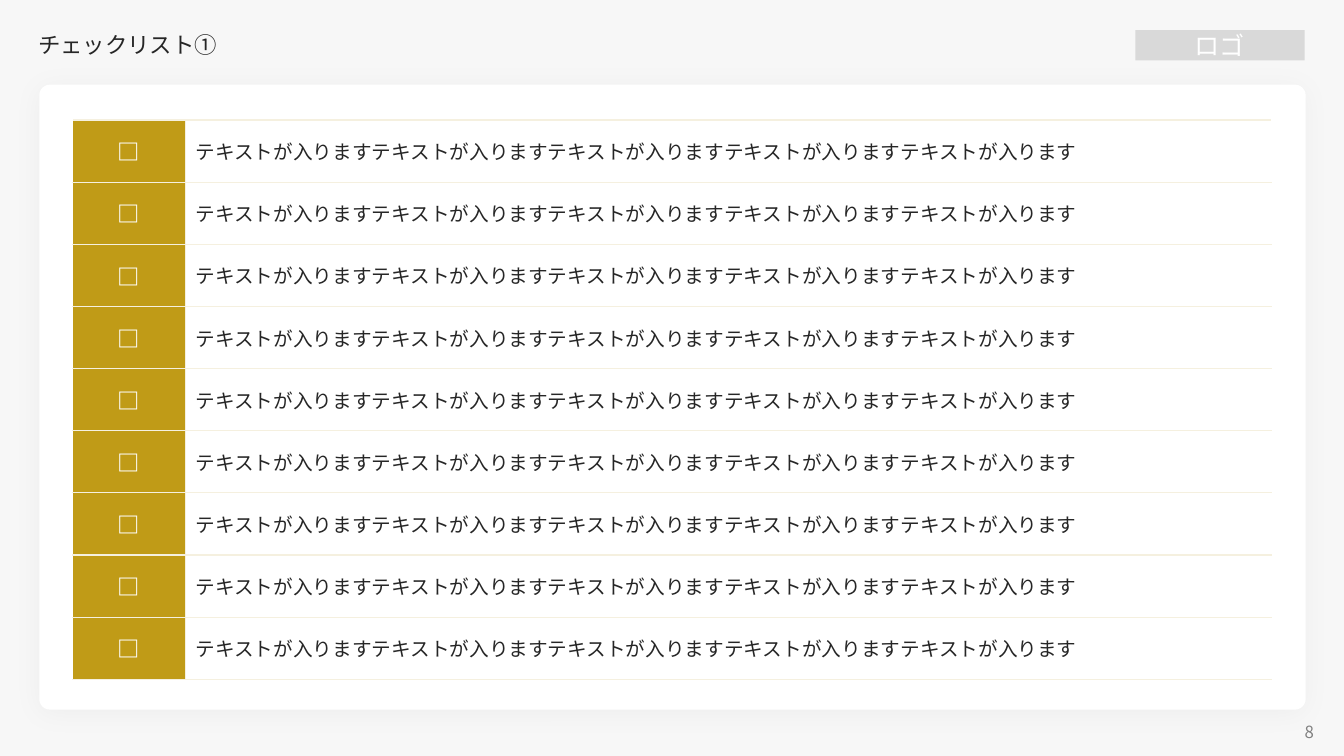
"""Build a checklist slide with a nine-row table on a white card."""
from dataclasses import dataclass

from lxml.etree import SubElement
from pptx import Presentation
from pptx.dml.color import RGBColor
from pptx.enum.shapes import MSO_SHAPE
from pptx.enum.text import MSO_ANCHOR, PP_ALIGN
from pptx.oxml.ns import qn
from pptx.util import Inches, Pt

FONT = "Noto Sans CJK JP"
COLORS = {
    "page": "F7F7F7",
    "white": "FFFFFF",
    "logo": "D9D9D9",
    "gold": "C09B17",
    "rule": "F5F0DF",
    "text": "262626",
    "number": "808080",
}
ROWS = 9
ROW_HEIGHT = 5.55 / ROWS
ITEM = "テキストが入ります" * 5


@dataclass
class Box:
    left: float
    top: float
    width: float
    height: float

    def place(self) -> tuple:
        return tuple(Inches(n) for n in (self.left, self.top, self.width, self.height))


@dataclass
class Style:
    size: int
    color: str
    align: PP_ALIGN = PP_ALIGN.LEFT
    bold: bool = False
    spacing: float = 1.0


@dataclass
class Column:
    width: float
    text: str
    fill: str
    style: Style
    edges: dict


@dataclass
class Panel:
    box: Box
    kind: MSO_SHAPE
    fill: str


@dataclass
class Label:
    box: Box
    text: str
    style: Style


PAGE = Panel(Box(0, 0, 13.33, 7.5), MSO_SHAPE.RECTANGLE, "page")
CARD = Panel(Box(0.39, 0.84, 12.56, 6.2), MSO_SHAPE.ROUNDED_RECTANGLE, "white")
LOGO = Panel(Box(11.26, 0.3, 1.68, 0.3), MSO_SHAPE.RECTANGLE, "logo")
LABELS = [
    Label(Box(10.02, 7.14, 3.11, 0.24), "8", Style(12, "number", PP_ALIGN.RIGHT)),
    Label(Box(0.28, 0.25, 10, 0.41), "チェックリスト①", Style(16, "text", spacing=0.9)),
]
COLUMNS = [
    Column(1.12, "□", "gold", Style(16, "white", PP_ALIGN.CENTER, True),
           {"L": "white", "R": "rule", "T": "rule", "B": "rule"}),
    Column(10.77, ITEM, "white", Style(14, "text"),
           {"L": "rule", "T": "rule", "B": "rule"}),
]


def tint(name: str) -> RGBColor:
    return RGBColor.from_string(COLORS[name])


def write(frame, text: str, style: Style) -> None:
    frame.text = text
    frame.word_wrap = True
    para = frame.paragraphs[0]
    para.alignment = style.align
    para.line_spacing = style.spacing
    font = para.runs[0].font
    font.size = Pt(style.size)
    font.bold = style.bold
    font.color.rgb = tint(style.color)
    font.name = FONT
    SubElement(font._element, qn("a:ea"), typeface=FONT)


def add_panel(slide, panel: Panel):
    shape = slide.shapes.add_shape(panel.kind, *panel.box.place())
    shape.shadow.inherit = False
    shape.fill.solid()
    shape.fill.fore_color.rgb = tint(panel.fill)
    shape.line.fill.background()
    return shape


def add_shadow(shape) -> None:
    effects = shape._element.spPr.find(qn("a:effectLst"))
    shadow = SubElement(effects, qn("a:outerShdw"), blurRad=str(Pt(20)),
                        dist=str(Pt(3)), dir="5400000", algn="t", rotWithShape="0")
    color = SubElement(shadow, qn("a:srgbClr"), val="000000")
    SubElement(color, qn("a:alpha"), val="3000")


def add_label(slide, label: Label) -> None:
    frame = slide.shapes.add_textbox(*label.box.place()).text_frame
    frame.vertical_anchor = MSO_ANCHOR.MIDDLE
    write(frame, label.text, label.style)


def add_edge(cell, side: str, color: str) -> None:
    props = cell._tc.get_or_add_tcPr()
    line = SubElement(props, qn(f"a:ln{side}"), w=str(Pt(1)))
    fill = SubElement(line, qn("a:solidFill"))
    SubElement(fill, qn("a:srgbClr"), val=COLORS[color])


def fill_cell(cell, column: Column) -> None:
    for side, color in column.edges.items():
        add_edge(cell, side, color)
    cell.fill.solid()
    cell.fill.fore_color.rgb = tint(column.fill)
    cell.vertical_anchor = MSO_ANCHOR.MIDDLE
    write(cell.text_frame, column.text, column.style)


def add_list(slide) -> None:
    box = Box(0.72, 1.19, sum(c.width for c in COLUMNS), ROWS * ROW_HEIGHT)
    table = slide.shapes.add_table(ROWS, len(COLUMNS), *box.place()).table
    table.first_row = False
    table.horz_banding = False
    for row in table.rows:
        row.height = Inches(ROW_HEIGHT)
    for index, column in enumerate(COLUMNS):
        table.columns[index].width = Inches(column.width)
        for row in range(ROWS):
            fill_cell(table.cell(row, index), column)


def main() -> None:
    deck = Presentation()
    deck.slide_width = Inches(13.33)
    deck.slide_height = Inches(7.5)
    slide = deck.slides.add_slide(deck.slide_layouts[6])
    add_panel(slide, PAGE)
    card = add_panel(slide, CARD)
    card.adjustments[0] = 0.017
    add_shadow(card)
    logo = add_panel(slide, LOGO)
    logo.text_frame.vertical_anchor = MSO_ANCHOR.MIDDLE
    write(logo.text_frame, "ロゴ", Style(18, "white", PP_ALIGN.CENTER))
    for label in LABELS:
        add_label(slide, label)
    add_list(slide)
    deck.save("out.pptx")


if __name__ == "__main__":
    main()
